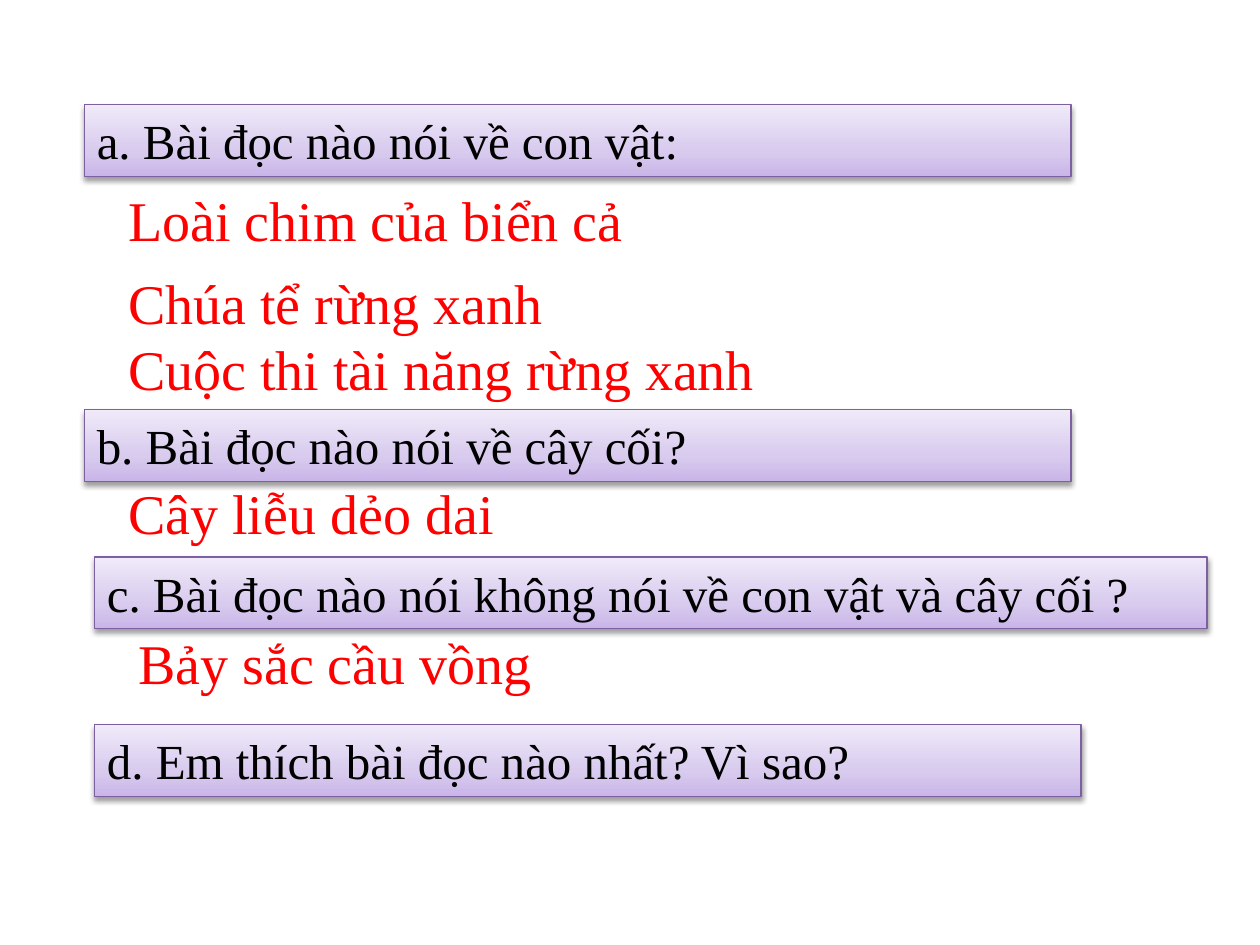
from lxml import etree
from pptx import Presentation
from pptx.dml.color import RGBColor
from pptx.enum.shapes import MSO_SHAPE
from pptx.enum.text import MSO_ANCHOR, MSO_AUTO_SIZE, PP_ALIGN
from pptx.oxml.ns import qn
from pptx.util import Inches, Pt

RECTANGLE = MSO_SHAPE.RECTANGLE
LEFT, TOP = PP_ALIGN.LEFT, MSO_ANCHOR.TOP
FIT_SHAPE = MSO_AUTO_SIZE.SHAPE_TO_FIT_TEXT

BLACK = RGBColor(0x00, 0x00, 0x00)
RED = RGBColor(0xFF, 0x00, 0x00)
PURPLE = RGBColor(0x7D, 0x60, 0xA0)
GRADIENT = (
    (0, RGBColor(0xC9, 0xB5, 0xE8)),
    (35, RGBColor(0xD8, 0xCB, 0xEE)),
    (100, RGBColor(0xF0, 0xEA, 0xF9)),
)
FONT = "Times New Roman"

BAR_HEIGHT, ANSWER_HEIGHT = 0.57, 0.64
WIDTH, WIDE = 7.83, 8.83
INDENT = 0.25  # answers sit this far right of their question

# Question, left, top, width, answers with their tops
SECTIONS = (
    ("a. Bài đọc nào nói về con vật:", 0.67, 0.83, WIDTH, (
        ("Loài chim của biển cả", 1.42),
        ("Chúa tể rừng xanh", 2.08),
        ("Cuộc thi tài năng rừng xanh", 2.61))),
    ("b. Bài đọc nào nói về cây cối?", 0.67, 3.25, WIDTH, (
        ("Cây liễu dẻo dai", 3.75),)),
    ("c. Bài đọc nào nói không nói về con vật và cây cối ?", 0.75, 4.42, WIDE, (
        ("Bảy sắc cầu vồng", 4.94),)),
    ("d. Em thích bài đọc nào nhất? Vì sao?", 0.75, 5.75, WIDTH, ()),
)


def add_color(parent, color):
    return etree.SubElement(parent, qn("a:srgbClr"), val=str(color))


def write_text(shape, text, size, color):
    frame = shape.text_frame
    frame.word_wrap = True
    frame.auto_size = FIT_SHAPE
    frame.vertical_anchor = TOP
    para = frame.paragraphs[0]
    para.text = text
    para.alignment = LEFT
    para.font.name = FONT
    para.font.size = Pt(size)
    para.font.color.rgb = color


def fill_gradient(shape):
    shape.fill.gradient()
    shape.fill.gradient_angle = 90
    stops = shape.element.spPr.find(".//" + qn("a:gsLst"))
    for stop in list(stops):
        stops.remove(stop)
    for percent, color in GRADIENT:
        add_color(etree.SubElement(stops, qn("a:gs"), pos=str(percent * 1000)), color)


def add_soft_shadow(shape):
    shape.shadow.inherit = False
    effects = shape.element.spPr.find(qn("a:effectLst"))
    shadow = etree.SubElement(
        effects, qn("a:outerShdw"), blurRad=str(Pt(3.1)), dist=str(Pt(1.6)),
        dir=str(90 * 60000), rotWithShape="0")
    etree.SubElement(add_color(shadow, BLACK), qn("a:alpha"), val="38000")


def add_question(page, text, left, top, width):
    bar = page.shapes.add_shape(
        RECTANGLE, Inches(left), Inches(top), Inches(width), Inches(BAR_HEIGHT))
    fill_gradient(bar)
    bar.line.color.rgb = PURPLE
    bar.line.width = Pt(0.75)
    add_soft_shadow(bar)
    write_text(bar, text, 28, BLACK)


def add_answer(page, text, left, top):
    box = page.shapes.add_textbox(
        Inches(left), Inches(top), Inches(WIDTH), Inches(ANSWER_HEIGHT))
    write_text(box, text, 32, RED)


def add_section(page, question, left, top, width, answers):
    add_question(page, question, left, top, width)
    for text, answer_top in answers:
        add_answer(page, text, left + INDENT, answer_top)


def main():
    deck = Presentation()
    deck.slide_width, deck.slide_height = Inches(10), Inches(7.5)
    page = deck.slides.add_slide(deck.slide_layouts[6])
    for section in SECTIONS:
        add_section(page, *section)
    deck.save("out.pptx")


if __name__ == "__main__":
    main()
